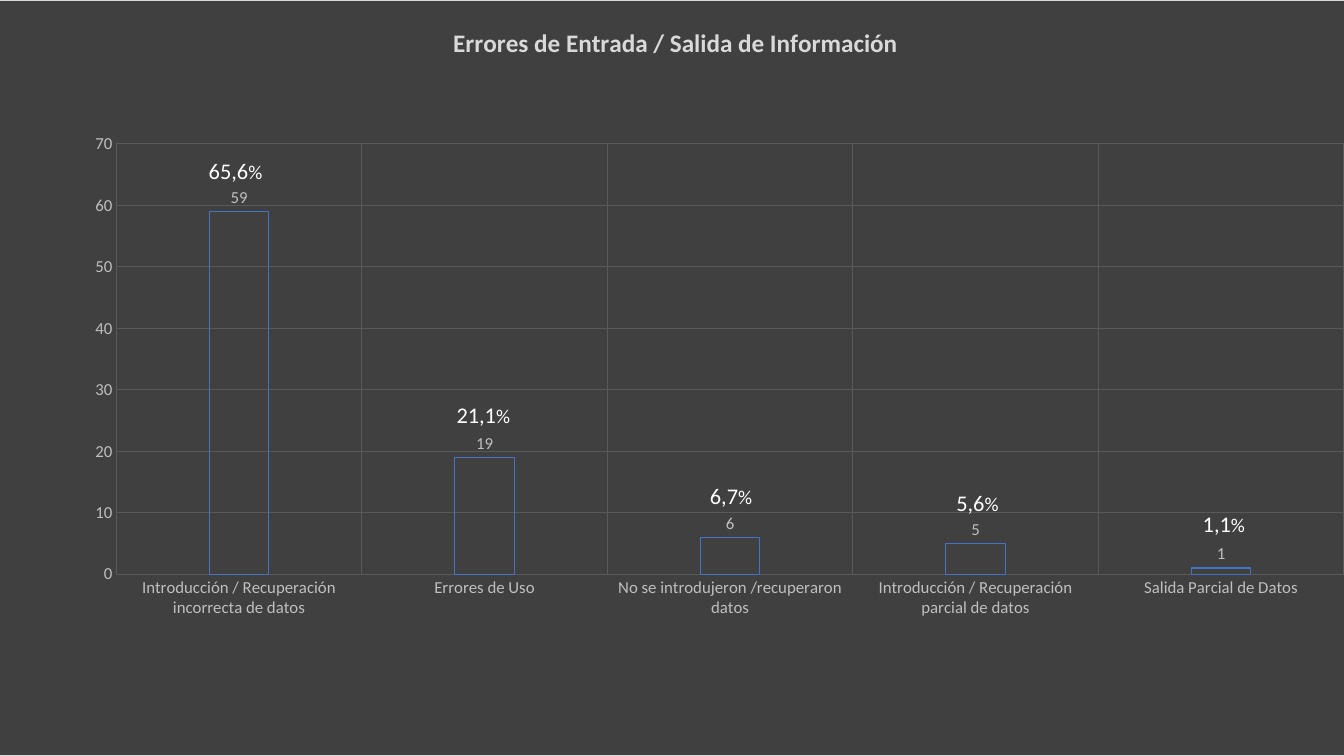
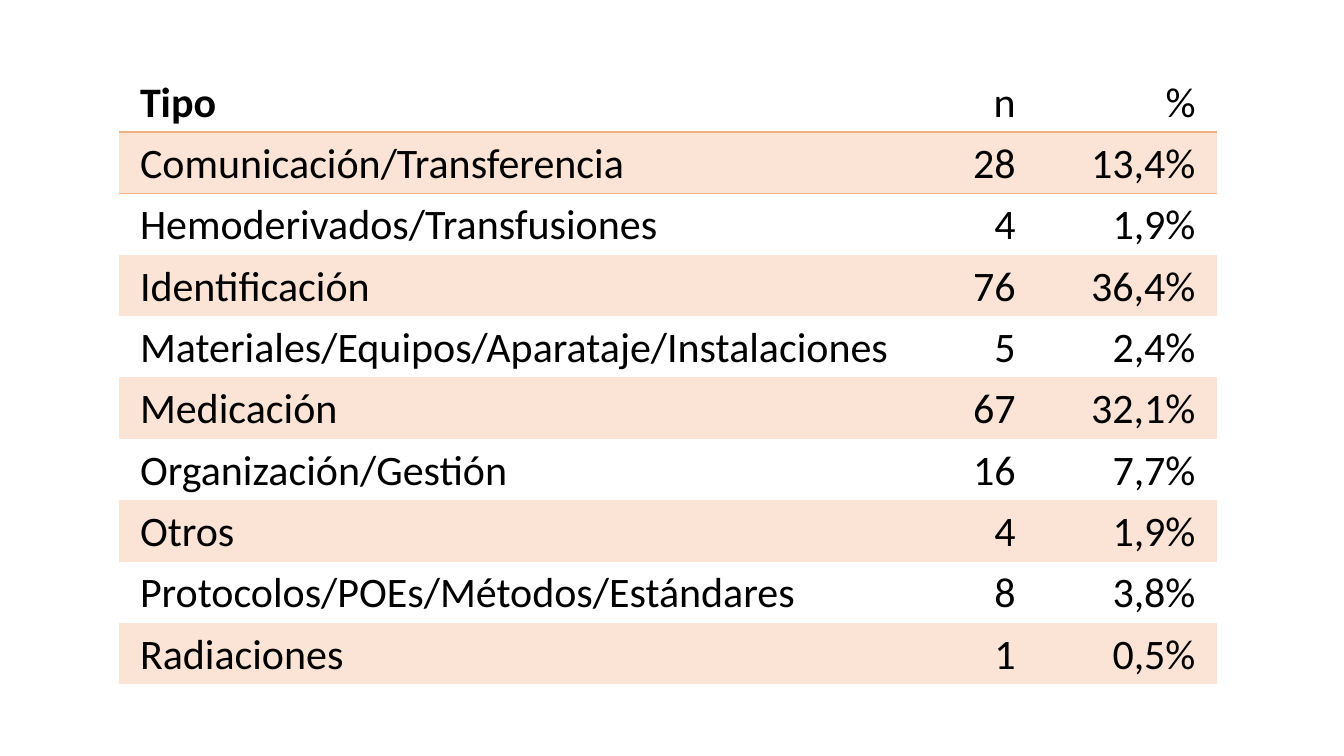
from dataclasses import dataclass

from lxml import etree
from pptx import Presentation
from pptx import util as u
from pptx.chart.data import CategoryChartData
from pptx.dml.color import RGBColor
from pptx.enum import chart as ch, text
from pptx.oxml import parse_xml
from pptx.oxml.ns import nsdecls, qn

Pt = u.Pt
FONT = "Calibri"
BLANK_LAYOUT = 6
PLAIN_TABLE_STYLE = "{2D5ABB26-0587-4C30-8999-92F81FD0307C}"
COLORS = {
    "panel": "404040", "panel_border": "D9D9D9", "grid": "595959",
    "axis": "BFBFBF", "bar": "4472C4", "white": "FFFFFF", "black": "000000",
    "band": "FBE4D5", "rule": "F4B083",
}


@dataclass
class ErrorBar:
    category: str
    count: int
    percent: str
    left: float  # percentage label, points
    top: float


BARS = [
    ErrorBar("Introducción / Recuperación incorrecta de datos", 59, "65,6", 142, 109),
    ErrorBar("Errores de Uso", 19, "21,1", 319, 283),
    ErrorBar("No se introdujeron /recuperaron datos", 6, "6,7", 500, 341),
    ErrorBar("Introducción / Recuperación parcial de datos", 5, "5,6", 676, 346),
    ErrorBar("Salida Parcial de Datos", 1, "1,1", 852, 361),
]

TABLE_ROWS = [
    ("Tipo", "n", "%"),
    ("Comunicación/Transferencia", "28", "13,4%"),
    ("Hemoderivados/Transfusiones", "4", "1,9%"),
    ("Identificación", "76", "36,4%"),
    ("Materiales/Equipos/Aparataje/Instalaciones", "5", "2,4%"),
    ("Medicación", "67", "32,1%"),
    ("Organización/Gestión", "16", "7,7%"),
    ("Otros", "4", "1,9%"),
    ("Protocolos/POEs/Métodos/Estándares", "8", "3,8%"),
    ("Radiaciones", "1", "0,5%"),
]
COL_WIDTHS = (572, 83.5, 128.5)
ROW_HEIGHT = 43.85


def rgb(name: str) -> RGBColor:
    return RGBColor.from_string(COLORS[name])


def set_font(font, size: float, color: str, bold: bool = False) -> None:
    font.name, font.size, font.bold = FONT, Pt(size), bold
    font.color.rgb = rgb(color)


def set_line(line, color: str, width: float = 0.75) -> None:
    line.color.rgb = rgb(color)
    line.width = Pt(width)


# Chart parts
def style_axis(axis) -> None:
    set_font(axis.tick_labels.font, 12, "axis")
    axis.major_tick_mark = axis.minor_tick_mark = ch.XL_TICK_MARK.NONE
    axis.format.line.fill.background()
    axis.has_major_gridlines = True
    set_line(axis.major_gridlines.format.line, "grid")


def paint_panel(chart) -> None:
    """Fill and border of the whole chart area."""
    chart._chartSpace.find(qn("c:chart")).addnext(parse_xml(
        f'<c:spPr {nsdecls("c", "a")}>'
        f'<a:solidFill><a:srgbClr val="{COLORS["panel"]}"/></a:solidFill>'
        f'<a:ln w="{Pt(0.75)}"><a:solidFill>'
        f'<a:srgbClr val="{COLORS["panel_border"]}"/></a:solidFill></a:ln></c:spPr>'))


def place_plot(chart, x: float, y: float, w: float, h: float) -> None:
    """Inner plot area, as fractions of the chart."""
    area = chart._chartSpace.find(qn("c:chart")).find(qn("c:plotArea"))
    for old in area.findall(qn("c:layout")):
        area.remove(old)
    layout = etree.Element(qn("c:layout"))
    manual = etree.SubElement(layout, qn("c:manualLayout"))
    for tag, val in (("layoutTarget", "inner"), ("xMode", "edge"), ("yMode", "edge"),
                     ("x", x), ("y", y), ("w", w), ("h", h)):
        etree.SubElement(manual, qn(f"c:{tag}")).set("val", str(val))
    area.insert(0, layout)


def add_error_chart(slide) -> None:
    data = CategoryChartData()
    data.categories = [bar.category for bar in BARS]
    data.add_series("Series 1", [bar.count for bar in BARS])
    chart = slide.shapes.add_chart(ch.XL_CHART_TYPE.COLUMN_CLUSTERED,
                                   Pt(-5), Pt(0), Pt(975), Pt(540), data).chart
    set_font(chart.font, 10, "black")
    paint_panel(chart)
    place_plot(chart, 0.09, 0.19, 0.9, 0.57)
    chart.has_legend = False

    chart.has_title = True
    p = chart.chart_title.text_frame.paragraphs[0]
    p.text = "Errores de Entrada / Salida de Información"
    set_font(p.font, 18, "panel_border", bold=True)
    chart.chart_title.include_in_layout = False

    for axis in (chart.category_axis, chart.value_axis):
        style_axis(axis)
    chart.value_axis.minimum_scale = 0
    chart.value_axis.maximum_scale = 70
    chart.value_axis.major_unit = 10

    plot = chart.plots[0]
    plot.gap_width, plot.overlap, plot.vary_by_categories = 315, -40, False
    series = plot.series[0]
    series.format.fill.background()
    set_line(series.format.line, "bar")
    labels = series.data_labels
    labels.show_value = True
    labels.position = ch.XL_LABEL_POSITION.OUTSIDE_END
    set_font(labels.font, 12, "axis")


def add_percent_label(slide, bar: ErrorBar) -> None:
    tf = slide.shapes.add_textbox(Pt(bar.left), Pt(bar.top), Pt(57), Pt(30)).text_frame
    tf.word_wrap = True
    for part, size in ((bar.percent, 16), ("%", 14)):
        r = tf.paragraphs[0].add_run()
        r.text = part
        set_font(r.font, size, "white")


# Table parts
def add_rule(cell, side: str) -> None:
    cell._tc.get_or_add_tcPr().insert(0, parse_xml(
        f'<a:{side} {nsdecls("a")} w="{Pt(1)}"><a:solidFill>'
        f'<a:srgbClr val="{COLORS["rule"]}"/></a:solidFill></a:{side}>'))


def fill_cell(cell, value: str, row: int, col: int) -> None:
    cell.margin_left = cell.margin_right = Pt(15)
    cell.margin_top, cell.margin_bottom = Pt(2), Pt(0)
    p = cell.text_frame.paragraphs[0]
    p.text = value
    p.line_spacing = 1.07
    p.alignment = text.PP_ALIGN.RIGHT if col else text.PP_ALIGN.LEFT
    set_font(p.font, 30, "black", bold=row == col == 0)
    if row % 2:
        cell.fill.solid()
        cell.fill.fore_color.rgb = rgb("band")
    else:
        cell.fill.background()
    if row < 2:
        add_rule(cell, "lnT" if row else "lnB")


def add_type_table(slide) -> None:
    table = slide.shapes.add_table(
        len(TABLE_ROWS), len(COL_WIDTHS), Pt(85), Pt(50.5),
        Pt(sum(COL_WIDTHS)), Pt(ROW_HEIGHT * len(TABLE_ROWS))).table
    table.first_row = table.horz_banding = False
    table._tbl.tblPr.find(qn("a:tableStyleId")).text = PLAIN_TABLE_STYLE
    for column, width in zip(table.columns, COL_WIDTHS):
        column.width = Pt(width)
    for i, values in enumerate(TABLE_ROWS):
        table.rows[i].height = Pt(ROW_HEIGHT)
        for j, value in enumerate(values):
            fill_cell(table.cell(i, j), value, i, j)


def main() -> None:
    prs = Presentation()
    prs.slide_width, prs.slide_height = Pt(960), Pt(540)
    chart_slide, table_slide = (
        prs.slides.add_slide(prs.slide_layouts[BLANK_LAYOUT]) for _ in range(2))

    # Slide 1: input and output errors
    add_error_chart(chart_slide)
    for bar in BARS:
        add_percent_label(chart_slide, bar)

    # Slide 2: incidents by type
    add_type_table(table_slide)

    prs.save("out.pptx")


if __name__ == "__main__":
    main()
